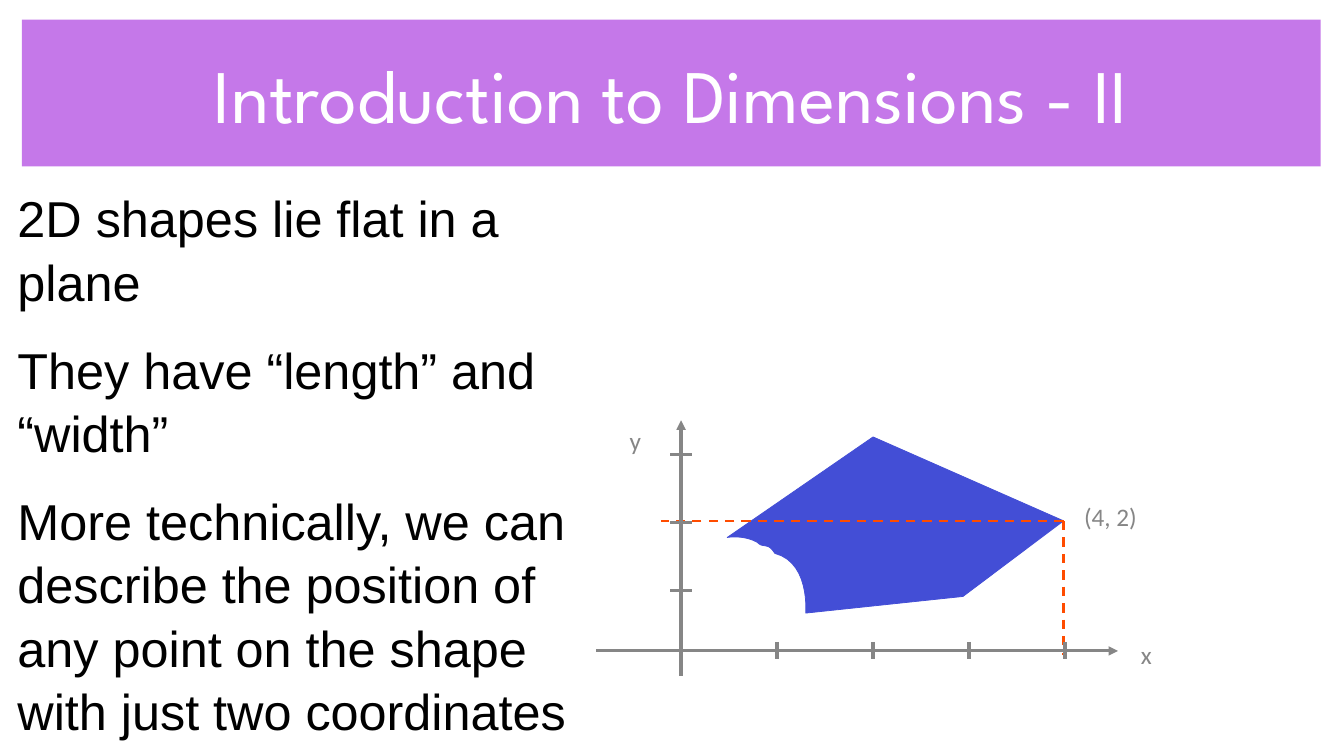
from lxml import etree
from pptx import Presentation
from pptx.dml.color import RGBColor
from pptx.enum.dml import MSO_LINE
from pptx.enum.shapes import MSO_CONNECTOR, MSO_SHAPE
from pptx.enum.text import MSO_ANCHOR, PP_ALIGN
from pptx.oxml.ns import qn
from pptx.util import Inches, Pt

RECT = MSO_SHAPE.RECTANGLE
STRAIGHT = MSO_CONNECTOR.STRAIGHT
DASH = MSO_LINE.DASH
MIDDLE = MSO_ANCHOR.MIDDLE
LEFT, CENTER = PP_ALIGN.LEFT, PP_ALIGN.CENTER

PURPLE, BLUE, ORANGE = "C578E9", "434ED6", "FF4C00"
GREY, WHITE, BLACK = "868686", "FFFFFF", "000000"

AXIS_X, AXIS_Y = 9.01, 8.61
STEP_X, STEP_Y = 1.27, 0.9
TICK_BASE_Y = 8.71
POINT = (14.07, 6.89)

BODY = [
    "2D shapes lie flat in a plane",
    "They have “length” and “width”",
    "More technically, we can describe the position of any point "
    "on the shape with just two coordinates",
]

EDGES = [(9.62, 7.11), (11.55, 5.78), POINT, (12.74, 7.89), (10.66, 8.11)]
# Each curve: two control points and an end point
CURVES = [
    [(10.67, 7.87), (10.63, 7.42), (10.25, 7.32)],
    [(10.23, 7.29), (10.21, 7.26), (10.18, 7.24)],
    [(10.15, 7.22), (10.1, 7.22), (10.07, 7.21)],
    [(10.04, 7.2), (10.02, 7.17), (9.99, 7.16)],
    [(9.89, 7.11), (9.74, 7.09), (9.62, 7.11)],
]


def rgb(color):
    return RGBColor.from_string(color)


def set_text(sp, paragraphs, size, font, color, align=CENTER, before=0,
             spacing=None, wrap=True):
    tf = sp.text_frame
    tf.word_wrap = wrap
    tf.vertical_anchor = MIDDLE
    tf.margin_left = tf.margin_right = Inches(0.04)
    tf.margin_top = tf.margin_bottom = Inches(0.04)
    for i, text in enumerate(paragraphs):
        p = tf.add_paragraph() if i else tf.paragraphs[0]
        p.alignment = align
        p.space_before = Pt(before)
        if spacing:
            p.line_spacing = spacing
        r = p.add_run()
        r.text = text
        r.font.size = Pt(size)
        r.font.name = font
        r.font.color.rgb = rgb(color)


def add_text(s, box, paragraphs, **fmt):
    sp = s.shapes.add_textbox(*map(Inches, box))
    set_text(sp, paragraphs, **fmt)


def add_label(s, box, text, wrap=True):
    add_text(s, box, [text], size=24, font="Calibri", color=GREY, wrap=wrap)


def add_banner(s, box, text):
    sp = s.shapes.add_shape(RECT, *map(Inches, box))
    sp.shadow.inherit = False
    sp.fill.solid()
    sp.fill.fore_color.rgb = rgb(PURPLE)
    sp.line.fill.background()
    set_text(sp, [text], size=72, font="League Spartan", color=WHITE)


def add_line(s, start, end, color=GREY, width=3, dash=None, arrow=False):
    line = s.shapes.add_connector(STRAIGHT, *map(Inches, (*start, *end)))
    line.line.color.rgb = rgb(color)
    line.line.width = Pt(width)
    if dash:
        line.line.dash_style = dash
    if arrow:
        ln = line.line._get_or_add_ln()
        etree.SubElement(ln, qn("a:tailEnd"), type="triangle")
    etree.SubElement(line._element.spPr, qn("a:effectLst"))


def curve_points(start, c1, c2, end, steps=12):
    for i in range(1, steps + 1):
        t = i / steps
        u = 1 - t
        yield tuple(u**3 * a + 3 * u * u * t * b + 3 * u * t * t * c + t**3 * d
                    for a, b, c, d in zip(start, c1, c2, end))


def add_flat_shape(s):
    points = list(EDGES)
    for curve in CURVES:
        points.extend(curve_points(points[-1], *curve))
    points = [(Inches(x), Inches(y)) for x, y in points]
    builder = s.shapes.build_freeform(*points[0])
    builder.add_line_segments(points[1:], close=True)
    sp = builder.convert_to_shape()
    sp.shadow.inherit = False
    sp.fill.solid()
    sp.fill.fore_color.rgb = rgb(BLUE)
    sp.line.color.rgb = rgb(BLUE)
    sp.line.width = Pt(0.75)


def add_axes(s):
    add_line(s, (AXIS_X, 8.94), (AXIS_X, 5.56), arrow=True)
    add_line(s, (7.89, AXIS_Y), (14.79, AXIS_Y), arrow=True)
    for i in range(1, 5):
        x = AXIS_X + i * STEP_X
        add_line(s, (x, 8.49), (x, 8.72))
    for i in range(1, 4):
        y = TICK_BASE_Y - i * STEP_Y
        add_line(s, (8.87, y), (9.16, y))
    add_label(s, (15.01, 8.41, 0.31, 0.49), "x")
    add_label(s, (8.25, 5.58, 0.31, 0.49), "y")


def main():
    prs = Presentation()
    prs.slide_width, prs.slide_height = Inches(17.78), Inches(10)
    s = prs.slides.add_slide(prs.slide_layouts[6])

    # Title and body
    add_banner(s, (0.29, 0.26, 17.18, 1.94), "Introduction to Dimensions - II")
    add_text(s, (0.19, 2.35, 7.68, 7.54), BODY, size=48, font="Arial",
             color=BLACK, align=LEFT, before=23, spacing=1.05)

    # Shape with the coordinates of one corner
    add_flat_shape(s)
    for end in ((POINT[0], 8.67), (8.74, POINT[1])):
        add_line(s, POINT, end, color=ORANGE, width=2.25, dash=DASH)
    add_label(s, (14.29, 6.58, 0.8, 0.49), "(4, 2)", wrap=False)

    # Coordinate axes
    add_axes(s)
    prs.save("out.pptx")


if __name__ == "__main__":
    main()
